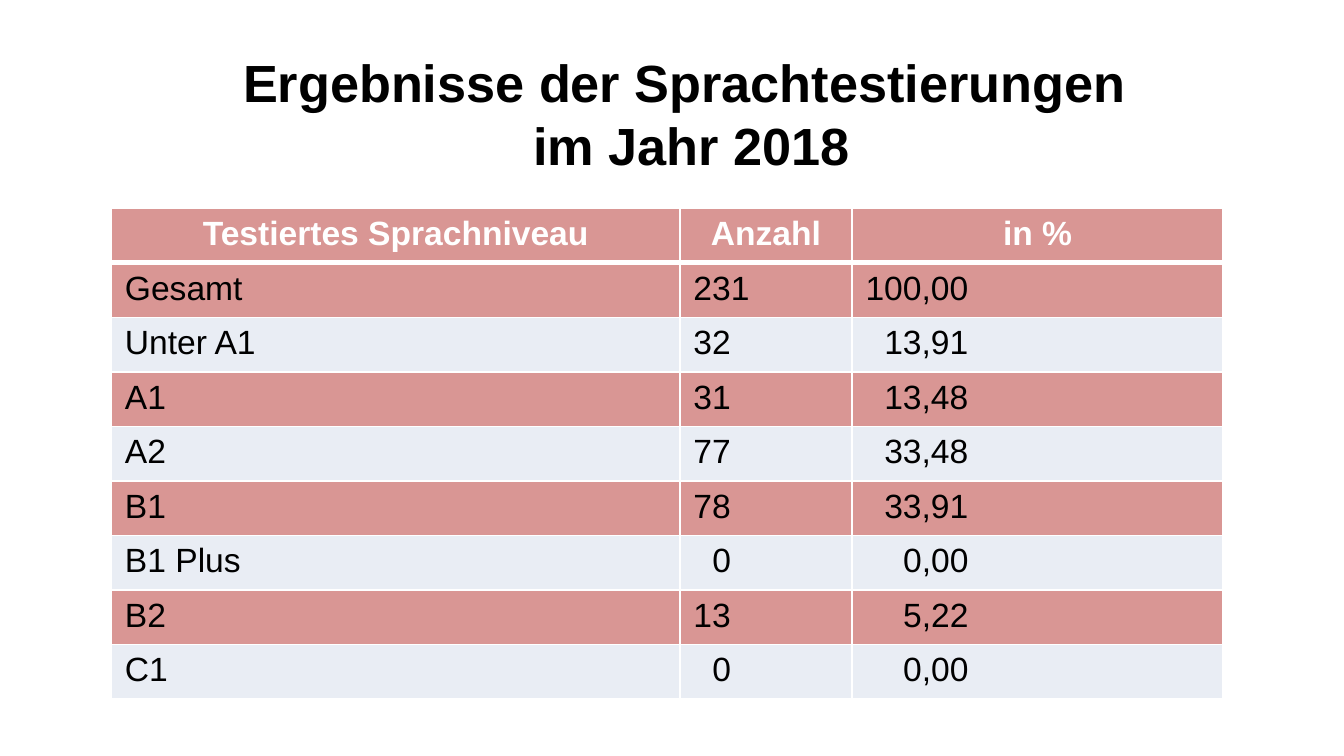
from dataclasses import dataclass

from lxml import etree
from pptx import Presentation
from pptx import util as u
from pptx.dml.color import RGBColor
from pptx.enum import text
from pptx.oxml import ns


@dataclass(frozen=True)
class Theme:
    font: str = "Arial"
    title_size: int = 28
    table_size: int = 18
    ink: str = "000000"
    paper: str = "FFFFFF"
    rose: str = "D99694"
    mist: str = "E9EDF4"
    thin: int = 1
    thick: int = 3


THEME = Theme()
WIDTH = 10
HEIGHT = WIDTH * 9 / 16
TITLE_BOX = (0.59, 0.37, 9, 0.94)
TABLE_LEFT, TABLE_TOP, TABLE_HEIGHT = 0.83, 1.55, 3.65
COLUMN_WIDTHS = (4.23, 1.28, 2.76)
CELL_MARGIN = 0.1
DIGIT_WIDTH = 0.14
# Characters of a number that starts at the cell margin; shorter ones are indented.
FULL_LENGTHS = (0, 2, 6)

TITLE = "Ergebnisse der Sprachtestierungen\v im Jahr 2018"
ROWS = (
    ("Testiertes Sprachniveau", "Anzahl", "in %"),
    ("Gesamt", "231", "100,00"),
    ("Unter A1", "32", "13,91"),
    ("A1", "31", "13,48"),
    ("A2", "77", "33,48"),
    ("B1", "78", "33,91"),
    ("B1 Plus", "0", "0,00"),
    ("B2", "13", "5,22"),
    ("C1", "0", "0,00"),
)


def write(frame, words, *, size, color=THEME.ink, bold=False,
          align=text.PP_ALIGN.LEFT):
    paragraph = frame.paragraphs[0]
    paragraph.text = words
    paragraph.alignment = align
    for run in paragraph.runs:
        run.font.name = THEME.font
        run.font.size = u.Pt(size)
        run.font.bold = bold
        run.font.color.rgb = RGBColor.from_string(color)


def set_borders(cell, **widths):
    """Draw white cell borders; widths are points, given in the order L, R, T, B."""
    properties = cell._tc.get_or_add_tcPr()
    for side, width in widths.items():
        line = etree.SubElement(properties, ns.qn(f"a:ln{side}"), w=str(u.Pt(width)))
        fill = etree.SubElement(line, ns.qn("a:solidFill"))
        etree.SubElement(fill, ns.qn("a:srgbClr"), val=THEME.paper)


def add_title(slide):
    box = slide.shapes.add_textbox(*map(u.Inches, TITLE_BOX))
    frame = box.text_frame
    frame.word_wrap = True
    frame.vertical_anchor = text.MSO_ANCHOR.MIDDLE
    write(frame, TITLE, size=THEME.title_size, bold=True,
          align=text.PP_ALIGN.CENTER)


def format_cell(cell, words, row, column):
    header = row == 0
    set_borders(cell, L=THEME.thin, R=THEME.thin,
                T=THEME.thick if row == 1 else THEME.thin,
                B=THEME.thick if header else THEME.thin)
    cell.fill.solid()
    fill = THEME.rose if header or row % 2 else THEME.mist
    cell.fill.fore_color.rgb = RGBColor.from_string(fill)
    if header:
        write(cell.text_frame, words, size=THEME.table_size, color=THEME.paper,
              bold=True, align=text.PP_ALIGN.CENTER)
    else:
        missing = max(0, FULL_LENGTHS[column] - len(words))
        cell.margin_left = u.Inches(CELL_MARGIN + missing * DIGIT_WIDTH)
        write(cell.text_frame, words, size=THEME.table_size)


def add_results_table(slide):
    frame = slide.shapes.add_table(
        len(ROWS), len(COLUMN_WIDTHS), u.Inches(TABLE_LEFT), u.Inches(TABLE_TOP),
        u.Inches(sum(COLUMN_WIDTHS)), u.Inches(TABLE_HEIGHT))
    table = frame.table
    for column, width in zip(table.columns, COLUMN_WIDTHS):
        column.width = u.Inches(width)
    for row, entries in enumerate(ROWS):
        for column, words in enumerate(entries):
            format_cell(table.cell(row, column), words, row, column)


def main():
    presentation = Presentation()
    presentation.slide_width = u.Inches(WIDTH)
    presentation.slide_height = u.Inches(HEIGHT)
    slide = presentation.slides.add_slide(presentation.slide_layouts[6])
    add_title(slide)
    add_results_table(slide)
    presentation.save("out.pptx")


if __name__ == "__main__":
    main()
